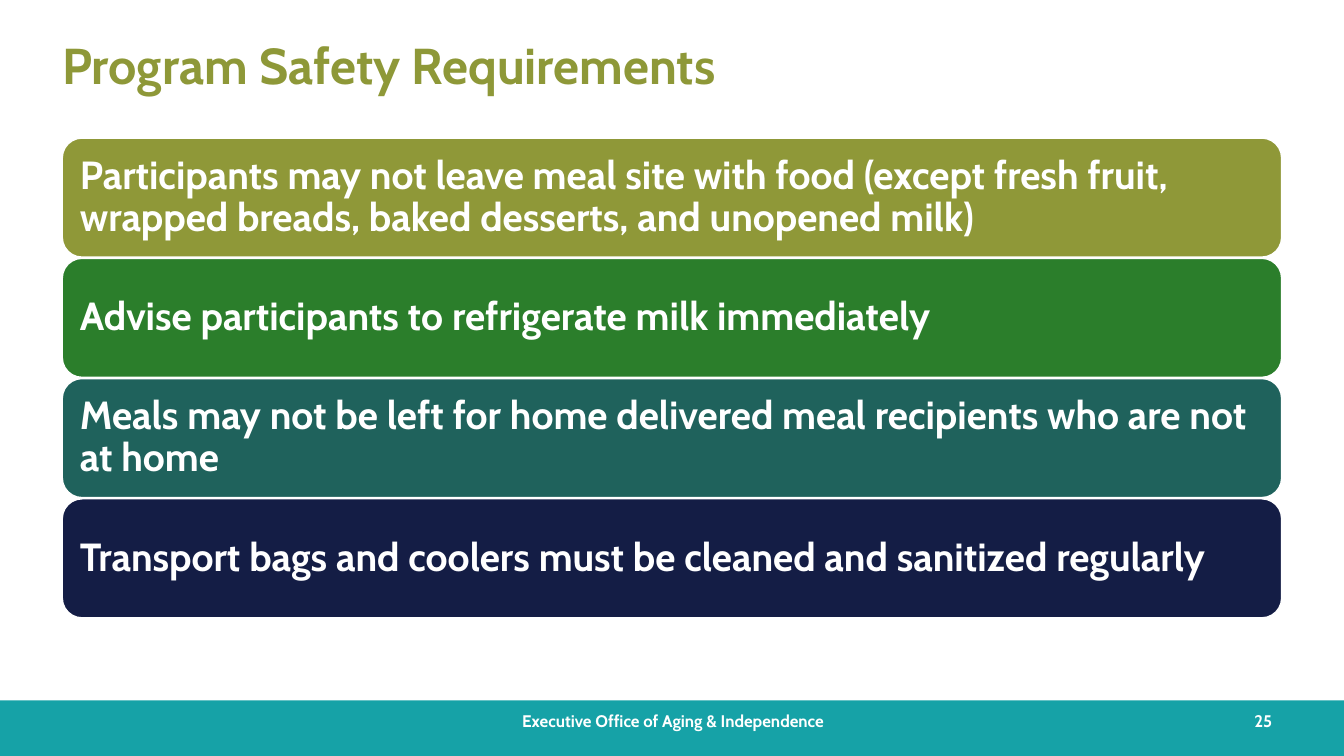
import pptx
import pptx.util
import pptx.dml.color
import pptx.enum.shapes
import pptx.enum.text

Cm = pptx.util.Cm
Kind = pptx.enum.shapes.MSO_SHAPE
Align = pptx.enum.text.PP_ALIGN

COLORS = {
    "white": "FFFFFF",
    "teal": "16A2A7",
    "title": "8E9838",
    "olive": "8F9838",
    "green": "2B7E2B",
    "pine": "1F625C",
    "navy": "141D45",
}

RULES = [
    ("olive", "Participants may not leave meal site with food (except fresh fruit, "
              "wrapped breads, baked desserts, and unopened milk)"),
    ("green", "Advise participants to refrigerate milk immediately"),
    ("pine", "Meals may not be left for home delivered meal recipients who are not at home"),
    ("navy", "Transport bags and coolers must be cleaned and sanitized regularly"),
]

LEFT, WIDTH = 1.57, 30.73
PAGE = 33.87


def color(name):
    return pptx.dml.color.RGBColor.from_string(COLORS[name])


def apply(target, values):
    for name, value in values.items():
        setattr(target, name, value)


def write(shape, text, size, tint="white", align=Align.LEFT, pad=(0.25, 0.13), lines=1.0):
    frame = shape.text_frame
    side, edge = Cm(pad[0]), Cm(pad[1])
    apply(frame, {
        "word_wrap": True,
        "vertical_anchor": pptx.enum.text.MSO_ANCHOR.MIDDLE,
        "margin_left": side, "margin_right": side,
        "margin_top": edge, "margin_bottom": edge,
    })
    para = frame.paragraphs[0]
    apply(para, {"alignment": align, "line_spacing": lines})
    run = para.add_run()
    run.text = text
    apply(run.font, {"name": "Cabin", "size": pptx.util.Pt(size), "bold": True})
    run.font.color.rgb = color(tint)


def label(slide, box, text, size, **style):
    write(slide.shapes.add_textbox(*map(Cm, box)), text, size, **style)


def block(slide, kind, box, fill, edge=None):
    shape = slide.shapes.add_shape(kind, *map(Cm, box))
    shape.shadow.inherit = False
    shape.fill.solid()
    shape.fill.fore_color.rgb = color(fill)
    if edge:
        shape.line.color.rgb = color(edge)
        shape.line.width = pptx.util.Pt(1)
    else:
        shape.line.fill.background()
    return shape


def main():
    deck = pptx.Presentation()
    apply(deck, {"slide_width": Cm(PAGE), "slide_height": Cm(19.05)})
    slide = deck.slides.add_slide(deck.slide_layouts[6])

    # Footer band
    top = 17.65
    block(slide, Kind.RECTANGLE, (0, top, PAGE, 1.4), "teal")
    label(slide, (11.25, top, 11.43, 1.02), "Executive Office of Aging & Independence",
          12, align=Align.CENTER)
    label(slide, (31.01, top, 1.3, 1.02), "25", 12, align=Align.RIGHT)

    # Title
    label(slide, (LEFT, 1.07, WIDTH, 1.12), "Program Safety Requirements", 36,
          tint="title", pad=(0, 0))

    # Stacked rules
    first, step, height = 3.48, 3.03, 3.0
    for row, (fill, text) in enumerate(RULES):
        box = (LEFT, first + row * step, WIDTH, height)
        bar = block(slide, Kind.ROUNDED_RECTANGLE, box, fill, edge="white")
        write(bar, text, 28, pad=(0.3, 0.3), lines=0.9)

    deck.save("out.pptx")


if __name__ == "__main__":
    main()
